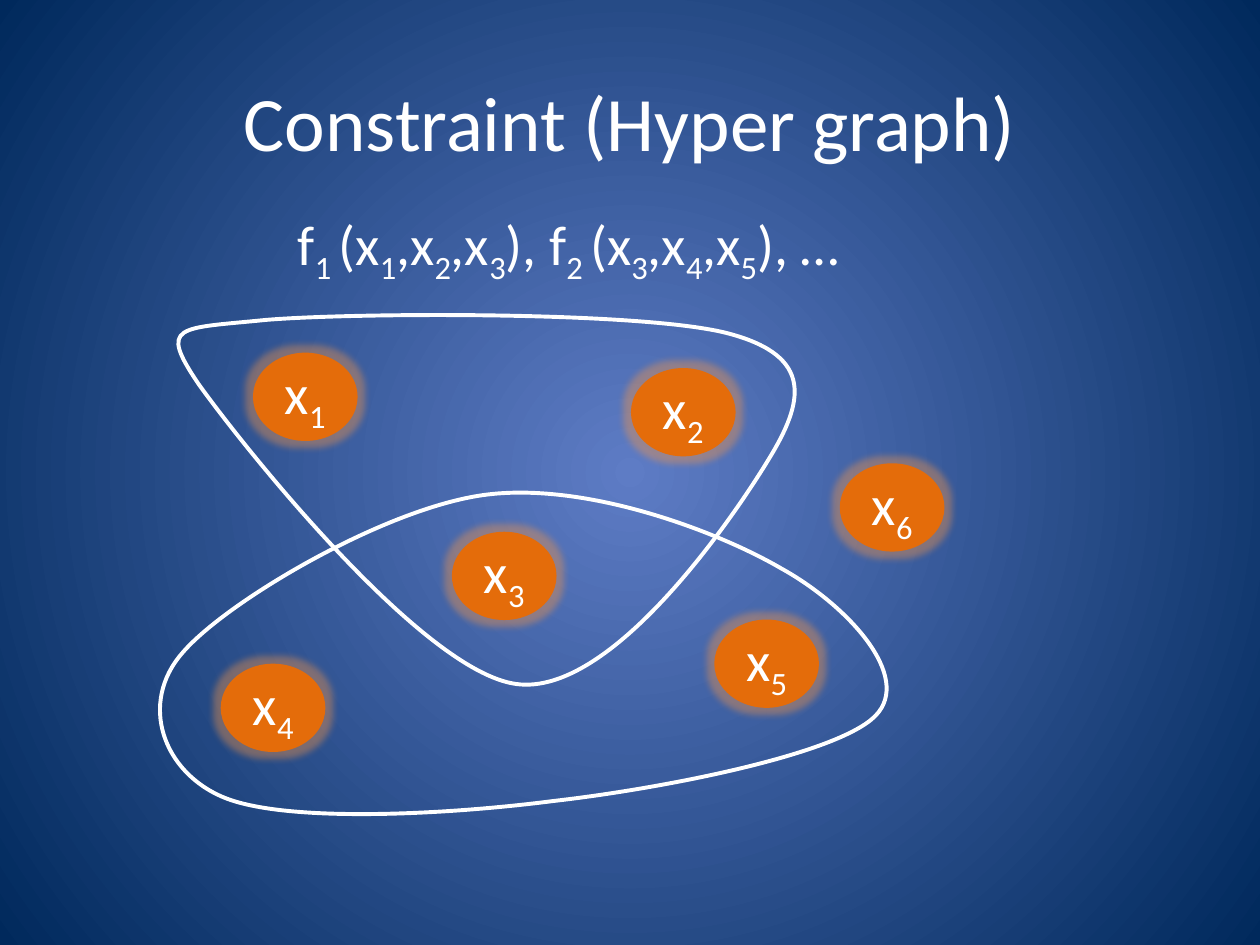
"""Build a slide that shows constraints as a hyper graph."""
import lxml.etree
import pptx
import pptx.dml.color
import pptx.enum.shapes
import pptx.enum.text
import pptx.oxml
import pptx.util

Cm = pptx.util.Cm
Pt = pptx.util.Pt
Align = pptx.enum.text.PP_ALIGN
Anchor = pptx.enum.text.MSO_ANCHOR
URI = "http://schemas.openxmlformats.org/drawingml/2006/main"
NS = f'xmlns:a="{URI}"'


def hue(code):
    return pptx.dml.color.RGBColor.from_string(code)


def write(shape, text, size=32, align=Align.CENTER, anchor=Anchor.MIDDLE):
    """Fill a shape with text whose every second part, split at |, is a subscript."""
    frame = shape.text_frame
    frame.word_wrap = True
    frame.vertical_anchor = anchor
    para = frame.paragraphs[0]
    para.alignment = align
    for i, part in enumerate(text.split("|")):
        run = para.add_run()
        run.text = part
        run.font.name = "Calibri"
        run.font.size = Pt(size)
        run.font.color.rgb = hue("FFFFFF")
        if i % 2:
            run._r.get_or_add_rPr().set("baseline", "-25000")


deck = pptx.Presentation()
deck.slide_width = Cm(25.4)
deck.slide_height = Cm(19.05)
slide = deck.slides.add_slide(deck.slide_layouts[6])
shapes = slide.shapes

back = slide.background.fill
back.gradient()
for stop, code, place in zip(back.gradient_stops, ("5E7CC5", "00295C"), (0, 1)):
    stop.color.rgb = hue(code)
    stop.position = place
line = slide._element.find(".//{*}gradFill/{*}lin")
line.getparent().replace(line, pptx.oxml.parse_xml(
    f'<a:path {NS} path="circle">'
    '<a:fillToRect l="50000" t="50000" r="50000" b="50000"/></a:path>'))

title = shapes.add_textbox(Cm(1.27), Cm(0.84), Cm(22.86), Cm(3.18))
write(title, "Constraint (Hyper graph)", size=44)

terms = shapes.add_textbox(Cm(5.5), Cm(4.09), Cm(13.41), Cm(1.63))
write(terms, " f|1 |(x|1|,x|2|,x|3|), f|2 |(x|3|,x|4|,x|5|), …",
      align=Align.LEFT, anchor=Anchor.TOP)
terms.text_frame.auto_size = pptx.enum.text.MSO_AUTO_SIZE.SHAPE_TO_FIT_TEXT

edges = [
    (3.61, 6.35, 12.42, 7.44,
     [(5.36, 6.45),
      (7.14, 6.3), (13.03, 6.27), (14.71, 6.73),
      (16.41, 7.19), (16.21, 8.1), (15.49, 9.27),
      (14.78, 10.44), (12.32, 14.05), (10.41, 13.79),
      (8.51, 13.54), (4.88, 8.97), (4.01, 7.75),
      (3.18, 6.53), (3.58, 6.63), (5.36, 6.45)]),
    (3.23, 9.93, 14.66, 6.48,
     [(11.15, 16.15),
      (13.34, 15.9), (16.89, 15.21), (17.65, 14.43),
      (18.42, 13.64), (17.07, 12.19), (15.75, 11.46),
      (14.43, 10.69), (11.76, 9.7), (9.75, 9.98),
      (7.72, 10.26), (4.55, 12.14), (3.68, 13.16),
      (2.79, 14.17), (3.28, 15.57), (4.52, 16.08),
      (5.77, 16.59), (8.97, 16.43), (11.15, 16.15)]),
]
for left, top, width, height, knots in edges:
    pen = shapes.build_freeform(Cm(left), Cm(top))
    pen.add_line_segments([(Cm(left + width), Cm(top + height))], close=True)
    edge = pen.convert_to_shape()
    edge.shadow.inherit = False
    edge.fill.background()
    edge.line.color.rgb = hue("FFFFFF")
    edge.line.width = Pt(2.25)
    track = edge._element.find(".//{*}pathLst")[0]
    for step in list(track):
        track.remove(step)
    for i, (x, y) in enumerate(knots):
        if i == 0 or i % 3 == 1:
            kind = "cubicBezTo" if i else "moveTo"
            step = lxml.etree.SubElement(track, f"{{{URI}}}{kind}")
        lxml.etree.SubElement(step, f"{{{URI}}}pt",
                              x=str(int(Cm(x - left))), y=str(int(Cm(y - top))))
    lxml.etree.SubElement(track, f"{{{URI}}}close")

nodes = [(1, 5.1, 7.11), (3, 9.11, 10.72), (4, 4.45, 13.38),
         (5, 14.4, 12.49), (2, 12.72, 7.42), (6, 16.93, 9.34)]
for num, left, top in nodes:
    node = shapes.add_shape(pptx.enum.shapes.MSO_SHAPE.OVAL,
                            Cm(left), Cm(top), Cm(2.11), Cm(1.78))
    node.shadow.inherit = False
    node.fill.solid()
    node.fill.fore_color.rgb = hue("E46C0A")
    node.line.fill.background()
    node._element.spPr.find("{*}effectLst").append(pptx.oxml.parse_xml(
        f'<a:glow {NS} rad="101600"><a:srgbClr val="F79646">'
        '<a:alpha val="40000"/></a:srgbClr></a:glow>'))
    write(node, f"x|{num}")

deck.save("out.pptx")
